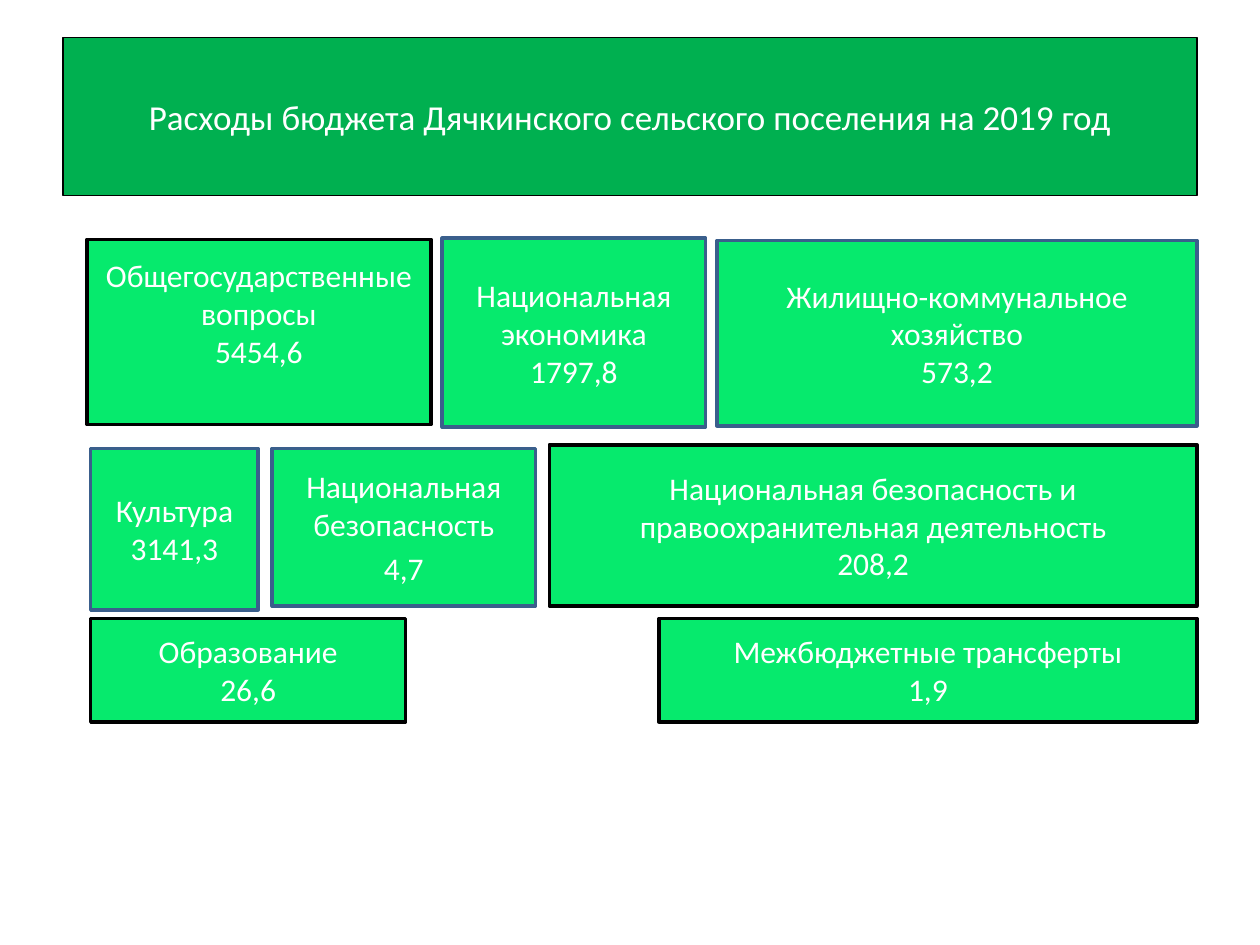
from pptx import Presentation
from pptx.dml.color import RGBColor
from pptx.enum.shapes import MSO_SHAPE
from pptx.enum.text import MSO_ANCHOR, PP_ALIGN
from pptx.util import Inches, Pt

WHITE = RGBColor(0xFF, 0xFF, 0xFF)
BLACK = RGBColor(0, 0, 0)
BLUE = RGBColor(0x3A, 0x5F, 0x8C)
GREEN = RGBColor(0x00, 0xB0, 0x50)
LIGHT = RGBColor(0x06, 0xEA, 0x6D)

deck = Presentation()
deck.slide_width, deck.slide_height = Inches(10), Inches(7.5)
slide = deck.slides.add_slide(deck.slide_layouts[6])
COL, ROW = deck.slide_width / 100, deck.slide_height / 100


def add_box(left, top, width, height, lines, edge, fill=LIGHT, size=18, weight=2):
    """Add a framed box; its place is in percent of the slide."""
    box = slide.shapes.add_shape(
        MSO_SHAPE.RECTANGLE, int(left * COL), int(top * ROW),
        int(width * COL), int(height * ROW))
    box.shadow.inherit = False
    box.fill.solid()
    box.fill.fore_color.rgb = fill
    box.line.color.rgb = edge
    box.line.width = Pt(weight)
    frame = box.text_frame
    frame.word_wrap = True
    frame.vertical_anchor = MSO_ANCHOR.MIDDLE
    frame.text = "\n".join(lines)
    for para in frame.paragraphs:
        para.alignment = PP_ALIGN.CENTER
        para.font.name = "Calibri"
        para.font.size = Pt(size)
        para.font.color.rgb = WHITE
    return frame


# Title
add_box(5, 4, 90, 16.67, ["Расходы бюджета Дячкинского сельского поселения на 2019 год"],
        BLACK, GREEN, 20, 0.75)

# Spending items: left, top, width, height, name, sum, edge
items = [
    (6.9, 25.33, 27.3, 19.6, "Общегосударственные вопросы", "5454,6", BLACK),
    (35.1, 25.2, 20.9, 20, "Национальная экономика", "1797,8", BLUE),
    (56.9, 25.47, 38.1, 19.6, "Жилищно-коммунальное хозяйство", "573,2", BLUE),
    (7.2, 47.47, 13.3, 17.07, "Культура", "3141,3", BLUE),
    (21.6, 47.47, 20.9, 16.67, "Национальная безопасность", "4,7", BLUE),
    (43.6, 47.07, 51.4, 17.07,
     "Национальная безопасность и правоохранительная деятельность", "208,2", BLACK),
    (7.2, 65.47, 25, 10.93, "Образование", "26,6", BLACK),
    (52.3, 65.47, 42.7, 10.93, "Межбюджетные трансферты", "1,9", BLACK),
]
frames = {}
for left, top, width, height, name, total, edge in items:
    frames[name] = add_box(left, top, width, height, [name, total], edge)

# The first item sits higher, the safety item has looser lines
frames["Общегосударственные вопросы"].margin_bottom = Inches(0.35)
for para in frames["Национальная безопасность"].paragraphs:
    para.space_before = Pt(3.6)

deck.save("out.pptx")
